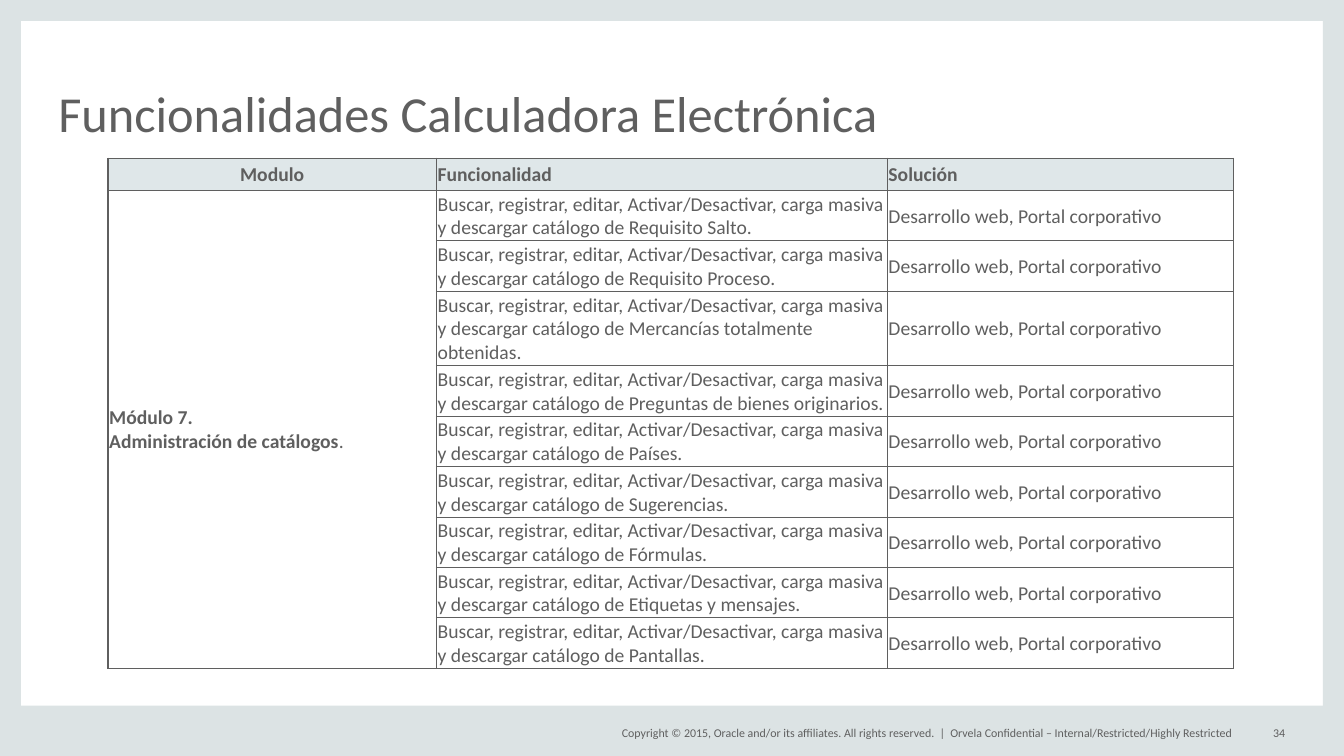
import copy

import pptx
import pptx.dml.color
import pptx.enum.shapes
import pptx.enum.text
import pptx.oxml
import pptx.oxml.ns
import pptx.util

Cm = pptx.util.Cm
Pt = pptx.util.Pt
ALIGN = pptx.enum.text.PP_ALIGN
ANCHOR = pptx.enum.text.MSO_ANCHOR
WIDE, HIGH = 33.87, 19.05
INK, FRAME, HEAD = "5F5F5F", "DCE3E4", "DFE7E9"
TASK = "Buscar, registrar, editar, Activar/Desactivar, carga masiva y descargar catálogo de "
TOPICS = ["Requisito Salto", "Requisito Proceso", "Mercancías totalmente obtenidas",
          "Preguntas de bienes originarios", "Países", "Sugerencias", "Fórmulas",
          "Etiquetas y mensajes", "Pantallas"]
ANSWER = "Desarrollo web, Portal corporativo"


def color(code):
    return pptx.dml.color.RGBColor.from_string(code)


def style(para, size, bold=False, align=ALIGN.LEFT):
    para.alignment = align
    for run in para.runs:
        run.font.name = "Calibri"
        run.font.size = Pt(size)
        run.font.bold = bold
        run.font.color.rgb = color(INK)


def label(slide, box, text, size, align=ALIGN.LEFT, anchor=ANCHOR.MIDDLE, wrap=False):
    frame = slide.shapes.add_textbox(*map(Cm, box)).text_frame
    frame.margin_left = frame.margin_right = frame.margin_top = frame.margin_bottom = 0
    frame.word_wrap = wrap
    frame.vertical_anchor = anchor
    frame.text = text
    style(frame.paragraphs[0], size, align=align)
    return frame.paragraphs[0]


def border(slide, box, edge, foot):
    left, top, wide, high = box
    bars = [(left, top, edge, high), (left + wide - edge, top, edge, high),
            (left, top + high - foot, wide, foot), (left, top, wide, edge)]
    for bar in bars:
        shape = slide.shapes.add_shape(pptx.enum.shapes.MSO_SHAPE.RECTANGLE, *map(Cm, bar))
        shape.shadow.inherit = False
        shape.fill.solid()
        shape.fill.fore_color.rgb = color(FRAME)
        shape.line.fill.background()


def footer(slide, box):
    left, top, wide, high = box
    label(slide, (left, top, 8.89, high),
          "Copyright © 2015, Oracle and/or its affiliates. All rights reserved.  |", 8.5, ALIGN.RIGHT)
    label(slide, (left + 9.01, top, 7.62, high),
          "Orvela Confidential – Internal/Restricted/Highly Restricted", 8.5)
    label(slide, (left + wide - 1.07, top, 1.07, high), "34", 8.5, ALIGN.RIGHT)


def outline(cell):
    props = cell._tc.get_or_add_tcPr()
    for side in ("lnL", "lnR", "lnT", "lnB"):
        props.append(pptx.oxml.parse_xml(
            f'<a:{side} {pptx.oxml.ns.nsdecls("a")} w="12700"><a:solidFill>'
            f'<a:srgbClr val="{INK}"/></a:solidFill></a:{side}>'))


def fill(cell, text, bold=False, align=ALIGN.LEFT):
    para = cell.text_frame.paragraphs[0]
    para.text = text
    style(para, 14, bold, align)
    for stop in para._p.findall(pptx.oxml.ns.qn("a:br")):
        stop.append(copy.deepcopy(para.runs[0]._r.rPr))
    return para


def grid(slide, box):
    rows = [["Modulo", "Funcionalidad", "Solución"]]
    rows += [["", f"{TASK}{topic}.", ANSWER] for topic in TOPICS]
    table = slide.shapes.add_table(len(rows), 3, *map(Cm, box)).table
    table.horz_banding = False
    table.first_row = False
    for col, wide in zip(table.columns, (8.28, 11.36, 8.72)):
        col.width = Cm(wide)
    for i, row in enumerate(rows):
        table.rows[i].height = Cm({0: 0.81, 3: 1.88}.get(i, 1.27))
        for j, text in enumerate(row):
            cell = table.cell(i, j)
            cell.margin_left = cell.margin_right = cell.margin_top = Cm(0.03)
            cell.margin_bottom = 0
            cell.vertical_anchor = ANCHOR.MIDDLE
            outline(cell)
            if i == 0:
                cell.fill.solid()
                cell.fill.fore_color.rgb = color(HEAD)
            else:
                cell.fill.background()
            fill(cell, text, i == 0, ALIGN.CENTER if i == j == 0 else ALIGN.LEFT)
    group = table.cell(1, 0)
    group.merge(table.cell(len(TOPICS), 0))
    para = fill(group, "Módulo 7. \vAdministración de catálogos", True)
    para.add_run().text = "."
    style(para, 14, True)
    para.runs[-1].font.bold = False


def main():
    deck = pptx.Presentation()
    deck.slide_width, deck.slide_height = Cm(WIDE), Cm(HIGH)
    slide = deck.slides.add_slide(deck.slide_layouts[6])
    border(slide, (0, 0, WIDE, HIGH), 0.53, 1.27)
    title = label(slide, (1.47, 1.12, 30.91, 2.46), "Funcionalidades Calculadora Electrónica",
                  36, anchor=ANCHOR.BOTTOM, wrap=True)
    title.line_spacing = 0.8
    footer(slide, (14.94, 18.21, 17.45, 0.51))
    grid(slide, (2.72, 3.99, 28.36, 12.85))
    deck.save("out.pptx")


if __name__ == "__main__":
    main()
